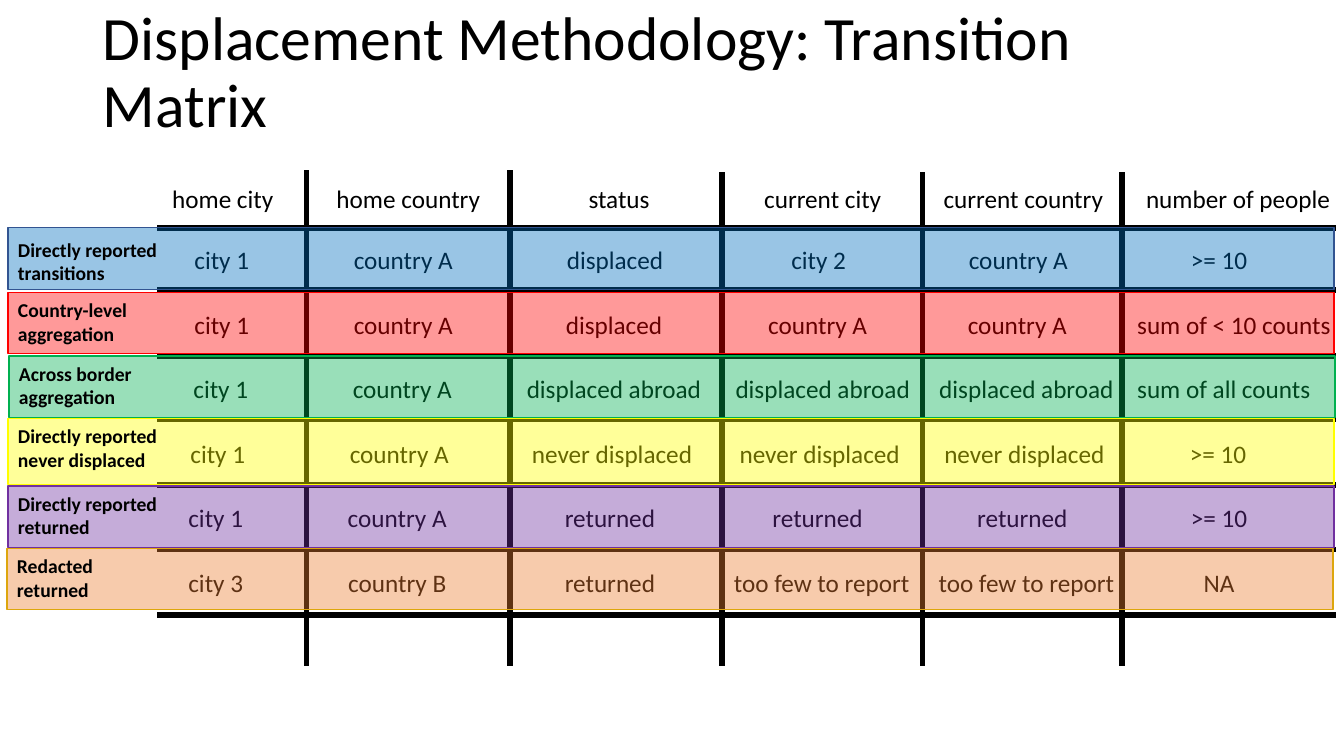
from lxml import etree
from pptx import Presentation
from pptx import util as u
from pptx.dml import color
from pptx.enum import shapes, text
from pptx.oxml import ns

In = u.Inches
rgb = color.RGBColor.from_string
left, center = text.PP_ALIGN.LEFT, text.PP_ALIGN.CENTER


def write(tf, words, align, **fmt):
    tf.word_wrap = True
    p = tf.paragraphs[0]
    p.alignment = align
    r = p.add_run()
    r.text = words
    r.font.color.rgb = rgb("000000")
    for name, value in {"name": "Calibri", "size": u.Pt(18), **fmt}.items():
        setattr(r.font, name, value)
    return p


def rule(x1, y1, x2, y2):
    c = s.shapes.add_connector(shapes.MSO_CONNECTOR.STRAIGHT, In(x1), In(y1), In(x2), In(y2))
    c.line.color.rgb = rgb("000000")
    c.line.width = u.Pt(4)
    etree.SubElement(c._element.spPr, ns.qn("a:effectLst"))


prs = Presentation()
prs.slide_width, prs.slide_height = In(13.33), In(7.5)
s = prs.slides.add_slide(prs.slide_layouts[5])

title = s.shapes.title
title.left, title.top, title.width, title.height = In(0.92), In(0.01), In(11.5), In(1.45)
title.text_frame.vertical_anchor = text.MSO_ANCHOR.MIDDLE
p = write(title.text_frame, "Displacement Methodology: Transition Matrix", left, size=u.Pt(44))
p.line_spacing = 0.9

for x, top in [(3.04, 1.69), (5.06, 1.69), (7.16, 1.71), (9.15, 1.71), (11.13, 1.71)]:
    rule(x, top, x, 6.61)
for y in [2.26, 2.88, 3.53, 4.16, 4.81, 5.45, 6.1]:
    rule(1.56, y, 13.25, y)

narrow = [1.67] * 5
wide = [1.67, 1.67, 2.06, 1.97, 2.05]
grid = [
    (1.77, [2.21, 4.05, 6.14, 8.16, 10.15, 12.28], [1.7, 1.7, 1.7, 1.7, 1.88, 2.19],
     ["home city", "home country", "status", "current city", "current country", "number of people"]),
    (2.37, [2.2, 4, 6.1, 8.12, 10.1, 12.09], narrow + [1.81],
     ["city 1", "country A", "displaced", "city 2", "country A", ">= 10"]),
    (3.02, [2.2, 4, 6.09, 8.11, 10.09, 12.42], narrow + [2.48],
     ["city 1", "country A", "displaced", "country A", "country A", "sum of < 10 counts"]),
    (3.65, [2.19, 3.99, 6.09, 8.16, 10.18, 12.42], wide + [2.48],
     ["city 1", "country A"] + ["displaced abroad"] * 3 + ["sum of all counts"]),
    (4.3, [2.16, 3.96, 6.07, 8.13, 10.16, 12.08], wide + [1.81],
     ["city 1", "country A"] + ["never displaced"] * 3 + [">= 10"]),
    (4.93, [2.14, 3.94, 6.05, 8.11, 10.14, 12.09], wide + [1.81],
     ["city 1", "country A"] + ["returned"] * 3 + [">= 10"]),
    (5.58, [2.14, 3.94, 6.05, 8.15, 10.18, 12.09], wide + [1.81],
     ["city 3", "country B", "returned", "too few to report", "too few to report", "NA"]),
]
for y, centers, widths, words in grid:
    for x, w, word in zip(centers, widths, words):
        sp = s.shapes.add_textbox(In(x - w / 2), In(y), In(w), In(0.4))
        write(sp.text_frame, word, left if word.startswith("sum") else center)

bands = [
    ("Directly reported transitions", 0.08, 2.26, 0.61, 2.31, "0070C0", "325491"),
    ("Country-level aggregation", 0.08, 2.9, 0.61, 2.91, "FF0000", "FF0000"),
    ("Across border aggregation", 0.09, 3.53, 0.61, 3.54, "00B050", "00B050"),
    ("Directly reported never displaced", 0.08, 4.15, 0.66, 4.16, "FFFF00", "FFFF00"),
    ("Directly reported returned", 0.08, 4.82, 0.61, 4.83, "7030A0", "7030A0"),
    ("Redacted returned", 0.07, 5.44, 0.61, 5.45, "ED7D31", "DDA60D"),
]
for label, x, y, h, label_y, fill, line in bands:
    sp = s.shapes.add_shape(shapes.MSO_SHAPE.RECTANGLE, In(x), In(y), In(13.15), In(h))
    sp.shadow.inherit = False
    sp.fill.solid()
    sp.fill.fore_color.rgb = rgb(fill)
    clr = sp._element.spPr.find(".//" + ns.qn("a:srgbClr"))
    etree.SubElement(clr, ns.qn("a:alpha"), val="40000")
    sp.line.color.rgb = rgb(line)
    sp.line.width = u.Pt(1)
    tb = s.shapes.add_textbox(In(x), In(label_y), In(1.67), In(0.57))
    write(tb.text_frame, label, left, size=u.Pt(14), bold=True)

prs.save("out.pptx")
